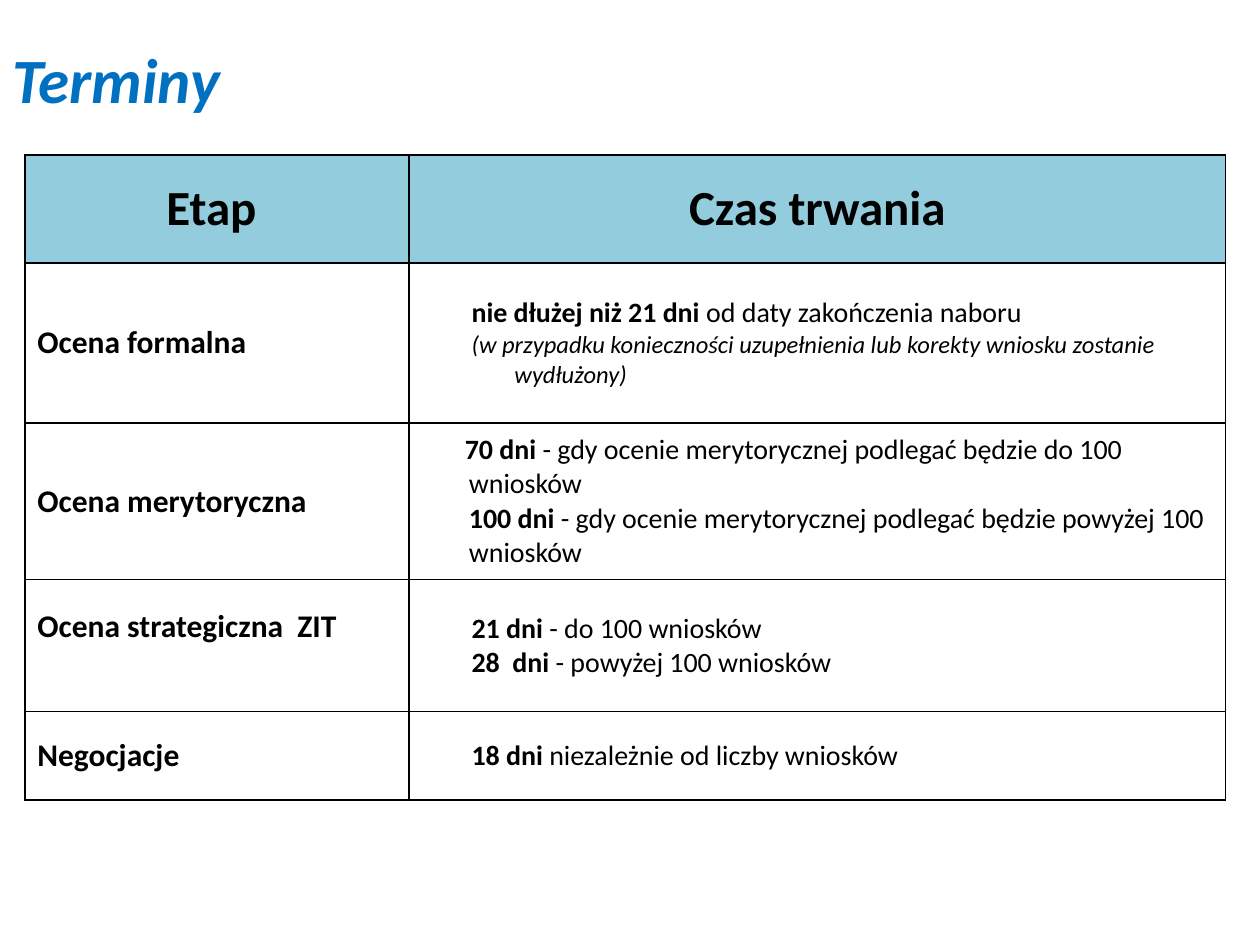
from lxml import etree
from pptx import Presentation
from pptx.dml import color
from pptx.enum import text as enum
from pptx.oxml import ns
from pptx.util import Pt

ROWS = [
    (91.5, "Ocena formalna", None, [
        (28.5, 0, 16, False, [("nie dłużej niż 21 dni ", True),
                              ("od daty zakończenia naboru", False)]),
        (53, -24.5, 14, True, [("(w przypadku konieczności uzupełnienia lub "
                                "korekty wniosku zostanie wydłużony)", False)]),
    ]),
    (89.3, "Ocena merytoryczna", "FFFFFF", [
        (27, -2.4, 16, False, [
            ("70 dni ", True),
            ("- gdy ocenie merytorycznej podlegać będzie do 100 wniosków", False),
            ("\n", False),
            ("100 dni ", True),
            ("- gdy ocenie merytorycznej podlegać będzie powyżej 100 wniosków", False)]),
    ]),
    (75.6, "Ocena strategiczna  ZIT", "FFFFFF", [
        (28.5, 0, 16, False, [("21 dni ", True), ("- do 100 wniosków", False)]),
        (28.5, 0, 16, False, [("28  dni ", True), ("- powyżej 100 wniosków", False)]),
    ]),
    (50.4, "Negocjacje", "FFFFFF", [
        (28.5, 0, 16, False, [("18 dni ", True),
                              ("niezależnie od liczby wniosków", False)]),
    ]),
]


def rgb(code):
    return color.RGBColor.from_string(code)


def write(para, runs, size=16, tint="000000", slant=False, align="LEFT",
          left=0, first=0):
    para.alignment = getattr(enum.PP_ALIGN, align)
    props = para._p.get_or_add_pPr()
    props.set("marL", str(int(Pt(left))))
    props.set("indent", str(int(Pt(first))))
    for words, bold in runs:
        if words == "\n":
            para.add_line_break()
            continue
        run = para.add_run()
        run.text = words
        font = run.font
        font.name, font.size = "Calibri", Pt(size)
        font.bold, font.italic = bold, slant
        font.color.rgb = rgb(tint)


def border(cell):
    props = cell._tc.get_or_add_tcPr()
    for place, side in enumerate(("lnL", "lnR", "lnT", "lnB")):
        line = etree.Element(ns.qn("a:" + side), w=str(int(Pt(1))))
        fill = etree.SubElement(line, ns.qn("a:solidFill"))
        etree.SubElement(fill, ns.qn("a:srgbClr"), val="000000")
        props.insert(place, line)


def style(cell, fill):
    cell.vertical_anchor = enum.MSO_ANCHOR.MIDDLE
    if fill:
        cell.fill.solid()
        cell.fill.fore_color.rgb = rgb(fill)
    else:
        cell.fill.background()
    border(cell)


def title(slide, x, y, w, h):
    frame = slide.shapes.add_textbox(Pt(x), Pt(y), Pt(w), Pt(h)).text_frame
    frame.word_wrap = True
    frame.vertical_anchor = enum.MSO_ANCHOR.MIDDLE
    write(frame.paragraphs[0], [("Terminy", True)], size=36, tint="0070C0",
          slant=True)


def terms(slide, x, y, w, h):
    table = slide.shapes.add_table(len(ROWS) + 1, 2, Pt(x), Pt(y), Pt(w), Pt(h)).table
    table.columns[0].width = Pt(0.32 * w)
    table.columns[1].width = Pt(0.68 * w)
    table.rows[0].height = Pt(h - sum(row[0] for row in ROWS))
    for col, head in enumerate(("Etap ", "Czas trwania")):
        cell = table.cell(0, col)
        style(cell, "93CDDD")
        write(cell.text_frame.paragraphs[0], [(head, True)], size=28, align="CENTER")
    for num, (high, name, fill, lines) in enumerate(ROWS, 1):
        table.rows[num].height = Pt(high)
        stage, time = table.cell(num, 0), table.cell(num, 1)
        style(stage, fill)
        style(time, fill)
        write(stage.text_frame.paragraphs[0], [(name, True)], size=18)
        frame = time.text_frame
        for pos, (left, first, size, slant, runs) in enumerate(lines):
            para = frame.add_paragraph() if pos else frame.paragraphs[0]
            write(para, runs, size=size, slant=slant, left=left, first=first)
    table.cell(3, 0).margin_bottom = Pt(25)


def main():
    deck = Presentation()
    deck.slide_width, deck.slide_height = Pt(720), Pt(540)
    slide = deck.slides.add_slide(deck.slide_layouts[6])
    title(slide, 0, 0, 648, 90)
    terms(slide, 14.2, 88.5, 686.2, 368.7)
    deck.save("out.pptx")


if __name__ == "__main__":
    main()
